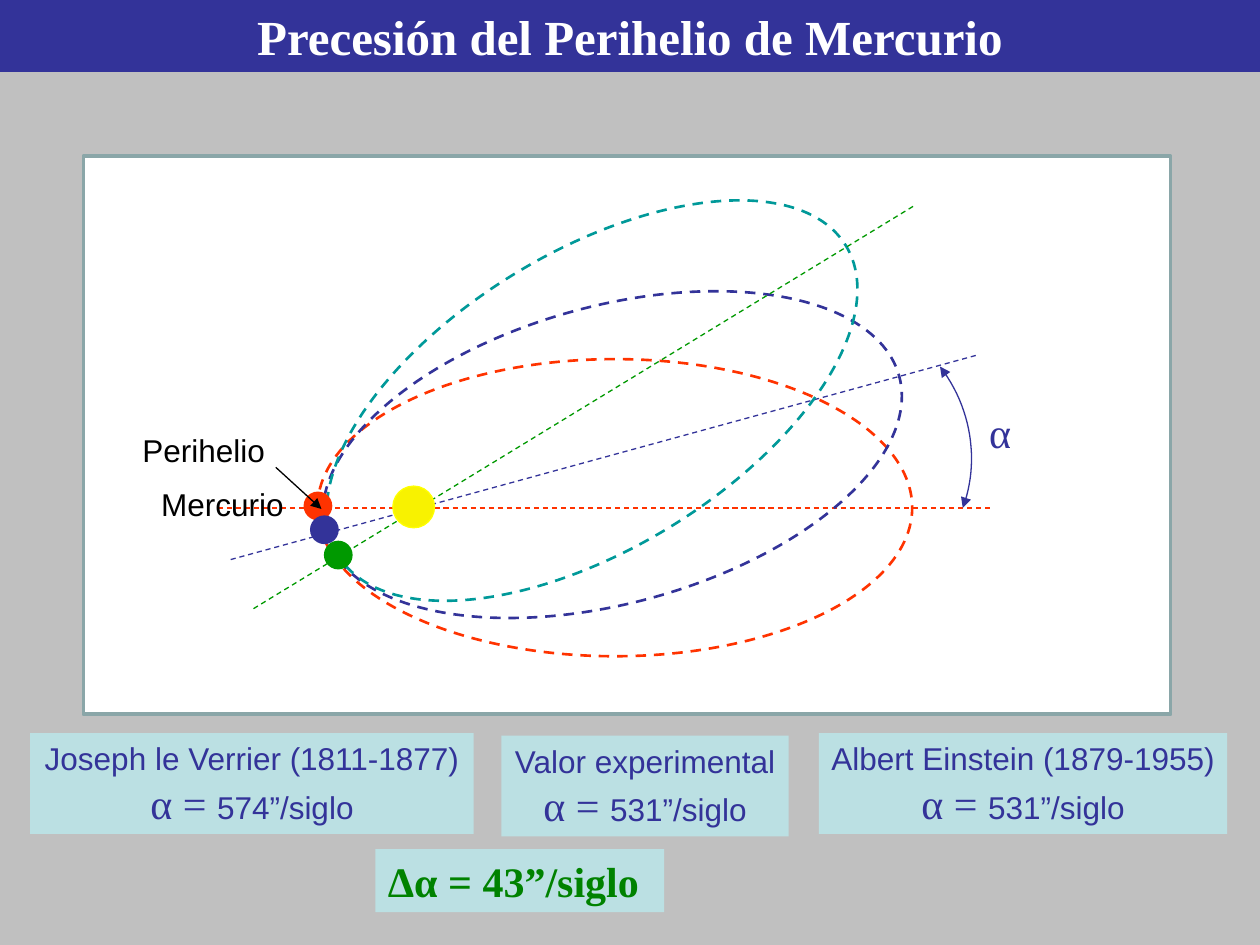
from lxml import etree
from pptx import Presentation
from pptx import util as u
from pptx.dml.color import RGBColor
from pptx.enum import dml, shapes, text
from pptx.oxml import ns

COLORS = {
    "background": "C0C0C0", "white": "FFFFFF", "frame": "8AA6A8",
    "red": "FF3300", "navy": "333399", "teal": "009999", "green": "009900",
    "sun": "F8F200", "sun edge": "FFFF00", "box": "BBE0E3",
    "result": "008200", "black": "000000",
}
SERIF, SANS = "Times New Roman", "Arial"
CENTER, LEFT = text.PP_ALIGN.CENTER, text.PP_ALIGN.LEFT


def style(item, fill=None, line=None, width=0.75, dashed=False, heads=()):
    """Set fill, outline and arrowheads, and switch the shadow off."""
    if fill:
        item.fill.solid()
        item.fill.fore_color.rgb = RGBColor.from_string(COLORS[fill])
    elif hasattr(item, "fill"):
        item.fill.background()
    if line:
        item.line.color.rgb = RGBColor.from_string(COLORS[line])
        item.line.width = u.Pt(width)
        if dashed:
            item.line.dash_style = dml.MSO_LINE.DASH
    else:
        item.line.fill.background()
    for head in heads:
        etree.SubElement(item.line._get_or_add_ln(), ns.qn(f"a:{head}"), type="triangle")
    etree.SubElement(item.element.spPr, ns.qn("a:effectLst"))


def write(item, paragraphs, align=LEFT, wrap=True):
    """Fill a shape with paragraphs of (text, font, size, color, bold) runs."""
    frame = item.text_frame
    frame_format = {
        "word_wrap": wrap,
        "auto_size": text.MSO_AUTO_SIZE.SHAPE_TO_FIT_TEXT,
        "vertical_anchor": text.MSO_ANCHOR.TOP,
    }
    for name, value in frame_format.items():
        setattr(frame, name, value)
    for index, runs in enumerate(paragraphs):
        paragraph = frame.add_paragraph() if index else frame.paragraphs[0]
        paragraph.alignment = align
        for words, font, size, color, bold in runs:
            run = paragraph.add_run()
            run.text = words
            for name, value in {"name": font, "size": u.Pt(size), "bold": bold}.items():
                setattr(run.font, name, value)
            run.font.color.rgb = RGBColor.from_string(COLORS[color])


prs = Presentation()
prs.slide_width, prs.slide_height = u.Cm(25.4), u.Cm(19.05)
slide = prs.slides.add_slide(prs.slide_layouts[6])
slide.background.fill.solid()
slide.background.fill.fore_color.rgb = RGBColor.from_string(COLORS["background"])
canvas = slide.shapes
RECT, OVAL = shapes.MSO_SHAPE.RECTANGLE, shapes.MSO_SHAPE.OVAL
STRAIGHT = shapes.MSO_CONNECTOR.STRAIGHT

# White panel behind the diagram
panel = canvas.add_shape(RECT, u.Cm(1.68), u.Cm(3.15), u.Cm(21.92), u.Cm(11.25))
style(panel, "white", "frame", 2)

# Three successive orbits, each with its major axis
orbits = [
    (6.4, 7.24, 0, "red", "red", (4.39, 10.24, 20.02, 10.24)),
    (6.35, 6.17, 344.7, "navy", "navy", (4.65, 11.28, 19.69, 7.16)),
    (5.94, 5.08, 328.6, "teal", "green", (5.11, 12.27, 18.44, 4.14)),
]
for left, top, angle, orbit_color, axis_color, ends in orbits:
    orbit = canvas.add_shape(OVAL, u.Cm(left), u.Cm(top), u.Cm(11.99), u.Cm(5.99))
    orbit.rotation = angle
    style(orbit, line=orbit_color, width=1.5, dashed=True)
    axis = canvas.add_connector(STRAIGHT, *map(u.Cm, ends))
    style(axis, line=axis_color, dashed=True)

# Angle between the first two axes, sampled along a Bézier curve
bezier = [(18.95, 7.39), (19.58, 8.2), (19.76, 9.3), (19.41, 10.24)]
STEPS = 24
arc_points = []
for step in range(STEPS + 1):
    t = step / STEPS
    weights = ((1 - t) ** 3, 3 * t * (1 - t) ** 2, 3 * t ** 2 * (1 - t), t ** 3)
    arc_points.append(tuple(
        u.Cm(sum(w * point[i] for w, point in zip(weights, bezier))) for i in (0, 1)
    ))
builder = canvas.build_freeform(*arc_points[0])
builder.add_line_segments(arc_points[1:], close=False)
style(builder.convert_to_shape(), line="navy", heads=("headEnd", "tailEnd"))

# Sun and the planet at its three perihelia
bodies = [
    (7.92, 9.8, 0.84, "sun", "sun edge"),
    (6.12, 9.91, 0.58, "red", None),
    (6.25, 10.39, 0.58, "navy", None),
    (6.53, 10.9, 0.58, "green", None),
]
for left, top, diameter, color, edge in bodies:
    body = canvas.add_shape(OVAL, u.Cm(left), u.Cm(top), u.Cm(diameter), u.Cm(diameter))
    style(body, color, edge)

# Diagram labels
labels = [
    ((19.69, 8.08, 5.05, 1.27), ("α", SERIF, 24, "navy", False)),
    ((3, 9.65, 3.38, 1.02), ("Mercurio", SANS, 18, "black", False)),
    ((2.62, 8.56, 3.1, 1.02), ("Perihelio", SANS, 18, "black", False)),
]
for place, run in labels:
    write(canvas.add_textbox(*map(u.Cm, place)), [[run]])

pointer = canvas.add_connector(STRAIGHT, u.Cm(5.56), u.Cm(9.42), u.Cm(6.48), u.Cm(10.26))
style(pointer, line="black", heads=("tailEnd",))

# Title bar and resulting difference
banners = [
    ((0, 0, 25.4, 1.45), "navy", CENTER,
     ("Precesión del Perihelio de Mercurio", SERIF, 28, "white", True)),
    ((7.57, 17.12, 5.82, 1.27), "box", LEFT,
     ("Δα = 43”/siglo", SERIF, 24, "result", True)),
]
for place, color, align, run in banners:
    banner = canvas.add_shape(RECT, *map(u.Cm, place))
    style(banner, color)
    write(banner, [[run]], align)

# Values of the angle by source
values = [
    (0.61, 14.78, 8.94, "Joseph le Verrier (1811-1877)", "574”/siglo"),
    (10.11, 14.83, 5.79, "Valor experimental", "531”/siglo"),
    (16.51, 14.78, 8.23, "Albert Einstein (1879-1955)", "531”/siglo"),
]
for left, top, width, origin, amount in values:
    card = canvas.add_shape(RECT, u.Cm(left), u.Cm(top), u.Cm(width), u.Cm(2.03))
    style(card, "box")
    write(card, [
        [(origin, SANS, 18, "navy", False)],
        [("α = ", SERIF, 24, "navy", False), (amount, SANS, 18, "navy", False)],
    ], CENTER, wrap=False)

prs.save("out.pptx")
